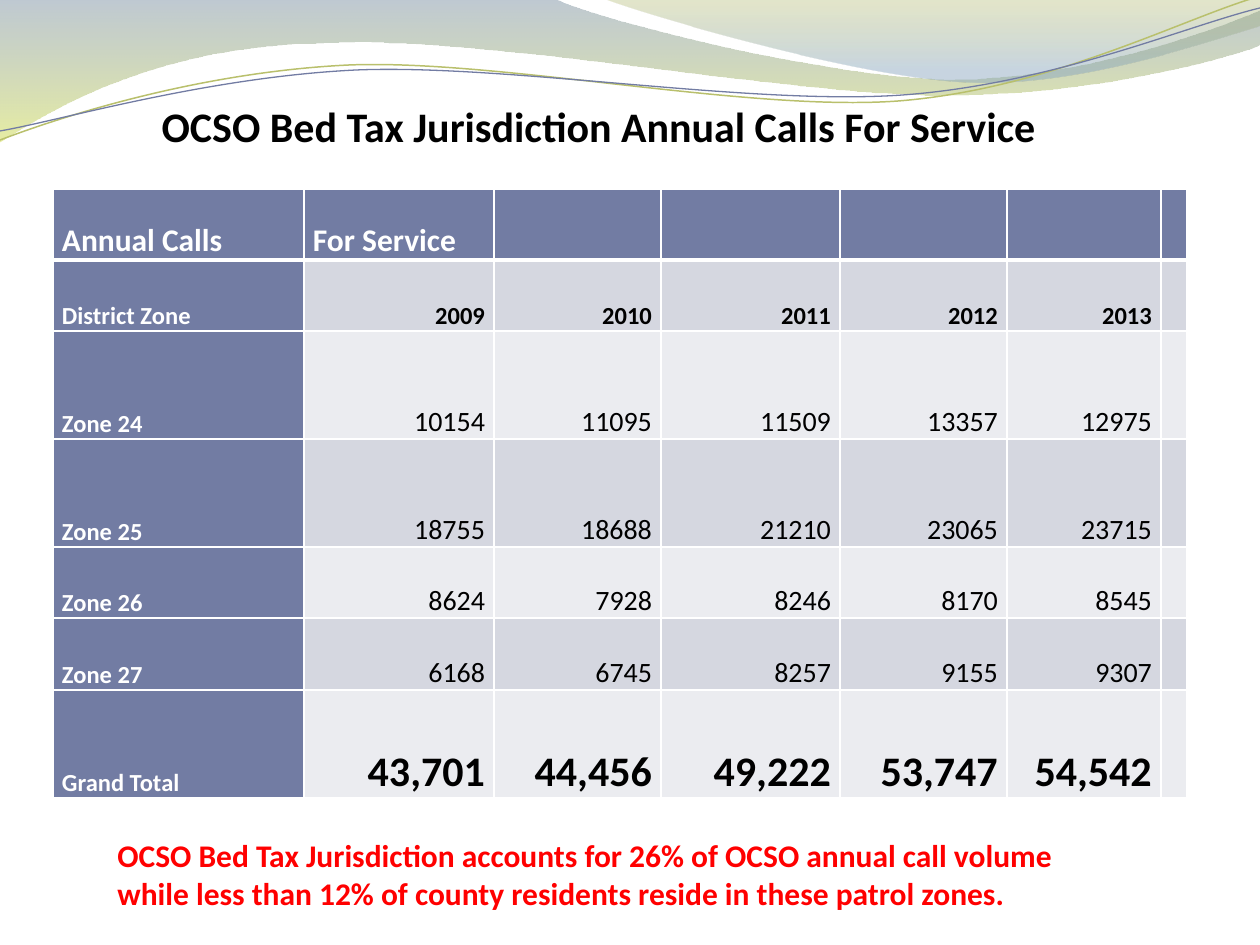
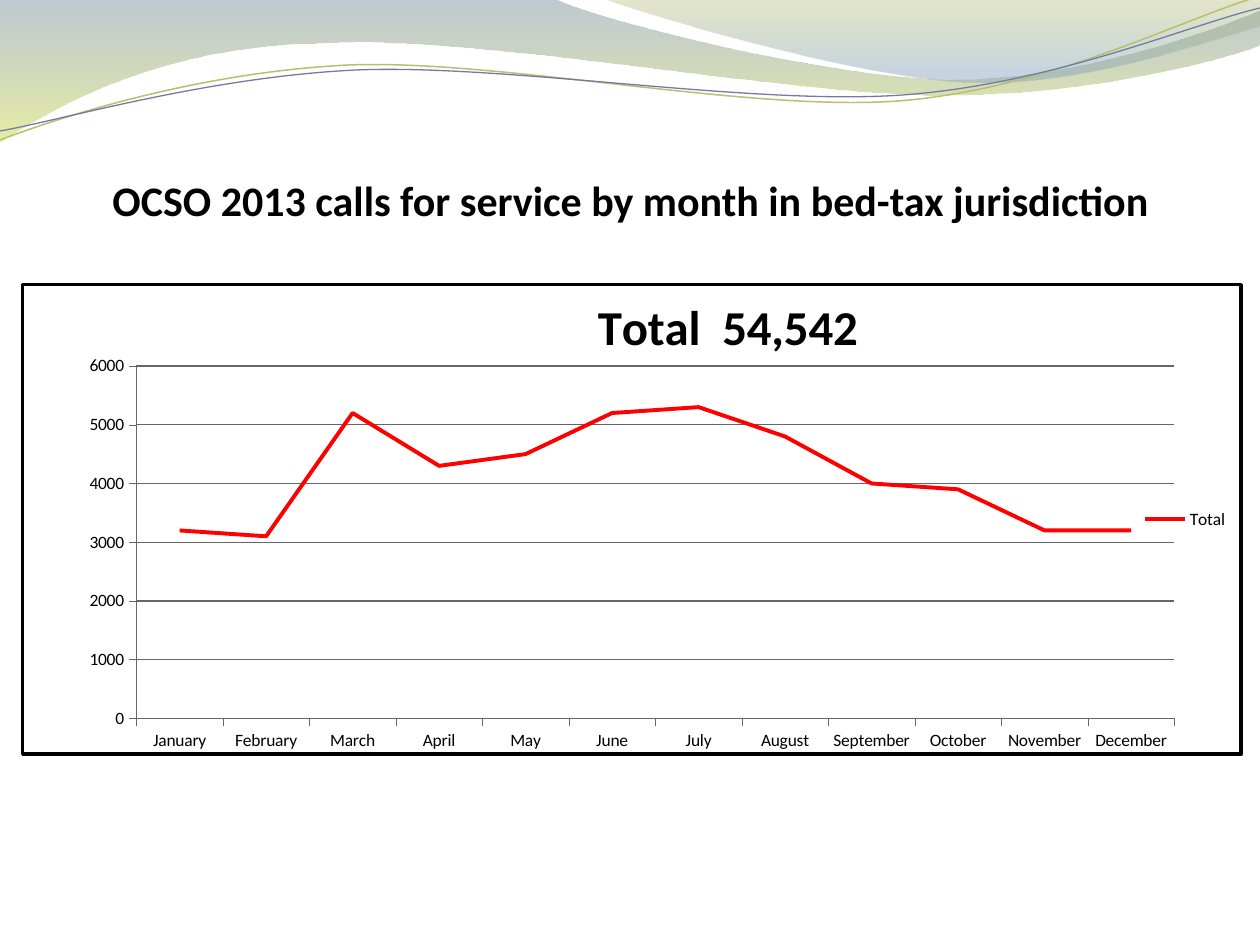
"""Build two slides on annual and monthly calls for service in the bed tax jurisdiction."""
from lxml import etree
from pptx import Presentation
from pptx import util as u
from pptx.chart.data import CategoryChartData
from pptx.dml.color import RGBColor
from pptx.enum import chart as ch, text as tx
from pptx.oxml import ns

FONT = "Calibri"
BLACK = RGBColor(0x00, 0x00, 0x00)
WHITE = RGBColor(0xFF, 0xFF, 0xFF)
RED = RGBColor(0xFF, 0x00, 0x00)
GREY = RGBColor(0x66, 0x66, 0x66)
SLATE = RGBColor(0x72, 0x7C, 0xA3)
BAND_DARK = RGBColor(0xD5, 0xD7, 0xE0)
BAND_LIGHT = RGBColor(0xEB, 0xEC, 0xF0)
STEEL = RGBColor(0x72, 0x88, 0x9B)
LIME = RGBColor(0xD3, 0xDE, 0x57)
OLIVE = RGBColor(0xA4, 0xAC, 0x50)
SKY = RGBColor(0x84, 0xA3, 0xBD)
MOSS = RGBColor(0xB9, 0xC0, 0x6C)
EMU_PER_PX = 914400 / 126

BANDS = [
    {"stops": [(0, STEEL, 45), (1, LIME, 55)], "start": (0, 0), "steps": [
        (555, -1), (600, 21, 837, 79, 955, 79), (1075, 79, 1207, 33, 1260, 11), (1261, 45),
        (1239, 55, 1096, 96, 940, 95), (784, 95, 481, 35, 324, 43), (163, 45, 58, 105, -1, 142)]},
    {"stops": [(0, OLIVE, 30), (0.8, SKY, 45)], "start": (604, -1), "steps": [
        (641, 14, 859, 78, 969, 82), (1079, 87, 1211, 40, 1260, 26), (1260, 0)]},
]
STRANDS = [
    {"color": MOSS, "weight": 0.85, "start": (0, 140), "steps": [
        (60, 117, 199, 72, 349, 65), (498, 59, 747, 112, 898, 101), (1050, 89, 1182, 19, 1257, -3)]},
    {"color": SLATE, "weight": 0.75, "start": (0, 131), "steps": [
        (59, 121, 207, 77, 357, 70), (508, 64, 752, 106, 903, 95), (1053, 84, 1186, 26, 1260, 8)]},
]

ANNUAL_TITLE = "OCSO Bed Tax Jurisdiction Annual Calls For Service "
ANNUAL_NOTE = ("OCSO Bed Tax Jurisdiction accounts for 26% of OCSO annual call volume "
               "while less than 12% of county residents reside in these patrol zones.")
ANNUAL_CALLS = [
    ["Annual Calls", "For Service", "", "", "", "", ""],
    ["District Zone", " 2009", "2010", "2011", "2012", "2013", ""],
    ["Zone 24", "10154", "11095", "11509", "13357", "12975", ""],
    ["Zone 25", "18755", "18688", "21210", "23065", "23715", ""],
    ["Zone 26", "8624", "7928", "8246", "8170", "8545", ""],
    ["Zone 27", "6168", "6745", "8257", "9155", "9307", ""],
    ["Grand Total", "43,701", "44,456", "49,222", "53,747", "54,542", ""],
]
COLUMN_WIDTHS = [251, 190, 167, 179, 167, 154, 26]
ROW_HEIGHTS = [71, 71, 108, 108, 71, 72, 108]

MONTHLY_TITLE = "OCSO 2013 calls for service by month in bed-tax jurisdiction "
MONTHLY_TOTAL = "Total  54,542"
MONTHLY_CALLS = {
    "January": 3200, "February": 3100, "March": 5200, "April": 4300,
    "May": 4500, "June": 5200, "July": 5300, "August": 4800,
    "September": 4000, "October": 3900, "November": 3200, "December": 3200,
}
CHART_BOX = (21, 283, 1222, 473)
PLOT_BOX = {"x": 114, "y": 82, "w": 1041, "h": 355}
TOTAL_CORNER = {"x": 568, "y": 0}


def px(length):
    return u.Emu(round(length * EMU_PER_PX))


def write(frame, words, size=14, color=BLACK, bold=True, align=tx.PP_ALIGN.LEFT, spacing=1.0):
    frame.word_wrap = True
    paragraph = frame.paragraphs[0]
    paragraph.alignment = align
    paragraph.line_spacing = spacing
    run = paragraph.add_run()
    run.text = words
    run.font.name = FONT
    run.font.size = u.Pt(size)
    run.font.bold = bold
    run.font.color.rgb = color


def add_curve(slide, curve, closed):
    points = [(px(x), px(y)) for step in curve["steps"] for x, y in zip(step[::2], step[1::2])]
    builder = slide.shapes.build_freeform(*map(px, curve["start"]))
    builder.add_line_segments(points, close=closed)
    outline = builder.convert_to_shape()
    outline.shadow.inherit = False
    lines = iter(list(outline.element.iter(ns.qn("a:lnTo"))))
    for step in curve["steps"]:
        segment = next(lines)
        if len(step) == 6:
            segment.addprevious(bend := etree.Element(ns.qn("a:cubicBezTo")))
            for line in (segment, next(lines), next(lines)):
                bend.append(line[0])
                line.getparent().remove(line)
    return outline


def add_waves(slide, layout):
    waves = []
    for band in BANDS:
        wave = add_curve(slide, band, True)
        wave.line.fill.background()
        wave.fill.gradient()
        wave.fill.gradient_angle = 270
        for stop, (position, color, _) in zip(wave.fill.gradient_stops, band["stops"]):
            stop.position = position
            stop.color.rgb = color
        for tint, (_, _, opacity) in zip(wave.element.iter(ns.qn("a:srgbClr")), band["stops"]):
            etree.SubElement(tint, ns.qn("a:alpha")).set("val", str(opacity * 1000))
        waves.append(wave)
    for strand in STRANDS:
        wave = add_curve(slide, strand, False)
        wave.fill.background()
        wave.line.color.rgb = strand["color"]
        wave.line.width = u.Pt(strand["weight"])
        waves.append(wave)
    for number, wave in enumerate(waves, 101):
        wave.element.nvSpPr.cNvPr.set("id", str(number))
        layout.shapes.element.append(wave.element)


def place_title(slide, words, left, top, width, height=63):
    title = slide.shapes.title
    title.left, title.top, title.width, title.height = map(px, (left, top, width, height))
    title.text_frame.auto_size = tx.MSO_AUTO_SIZE.NONE
    title.text_frame.vertical_anchor = tx.MSO_ANCHOR.TOP
    write(title.text_frame, words, size=24, align=tx.PP_ALIGN.CENTER)


def set_borders(cell, top=1, bottom=1):
    properties = cell._tc.get_or_add_tcPr()
    for i, (side, weight) in enumerate([("L", 1), ("R", 1), ("T", top), ("B", bottom)]):
        edge = etree.Element(ns.qn(f"a:ln{side}"), w=str(u.Pt(weight)))
        paint = etree.SubElement(edge, ns.qn("a:solidFill"))
        etree.SubElement(paint, ns.qn("a:srgbClr")).set("val", str(WHITE))
        properties.insert(i, edge)


def cell_format(row, column):
    if row == 0:
        return {"size": 18, "color": WHITE}
    if column == 0:
        return {"color": WHITE}
    size = {1: 14, len(ANNUAL_CALLS) - 1: 24}.get(row, 16)
    return {"size": size, "bold": size != 16, "align": tx.PP_ALIGN.RIGHT}


def add_calls_table(slide, left, top):
    calls = slide.shapes.add_table(
        len(ROW_HEIGHTS), len(COLUMN_WIDTHS), px(left), px(top),
        px(sum(COLUMN_WIDTHS)), px(sum(ROW_HEIGHTS))).table
    calls.horz_banding = False
    for column, width in zip(calls.columns, COLUMN_WIDTHS):
        column.width = px(width)
    for r, entries in enumerate(ANNUAL_CALLS):
        calls.rows[r].height = px(ROW_HEIGHTS[r])
        for c, entry in enumerate(entries):
            cell = calls.cell(r, c)
            cell.fill.solid()
            cell.fill.fore_color.rgb = SLATE if r == 0 or c == 0 else (BAND_LIGHT, BAND_DARK)[r % 2]
            cell.vertical_anchor = tx.MSO_ANCHOR.BOTTOM
            cell.margin_left = cell.margin_right = px(9)
            cell.margin_top = cell.margin_bottom = 0
            set_borders(cell, top=3 if r == 1 else 1, bottom=3 if r == 0 else 1)
            if entry:
                write(cell.text_frame, entry, spacing=1.15, **cell_format(r, c))


def set_layout(part, index, box, **modes):
    old = part.find(ns.qn("c:layout"))
    if old is not None:
        part.remove(old)
    layout = etree.Element(ns.qn("c:layout"))
    manual = etree.SubElement(layout, ns.qn("c:manualLayout"))
    *_, width, height = CHART_BOX
    shares = {key: length / (width if key in "xw" else height) for key, length in box.items()}
    for key, value in {**modes, "xMode": "edge", "yMode": "edge", **shares}.items():
        etree.SubElement(manual, ns.qn(f"c:{key}")).set("val", str(value))
    part.insert(index, layout)


def frame_chart(chart, weight):
    area = etree.Element(ns.qn("c:spPr"))
    edge = etree.Element(ns.qn("a:ln"), w=str(u.Pt(weight)))
    for parent, color in ((area, WHITE), (edge, BLACK)):
        paint = etree.SubElement(parent, ns.qn("a:solidFill"))
        etree.SubElement(paint, ns.qn("a:srgbClr")).set("val", str(color))
    area.append(edge)
    chart.element.find(ns.qn("c:chart")).addnext(area)


def add_monthly_chart(slide):
    data = CategoryChartData()
    data.categories = list(MONTHLY_CALLS)
    data.add_series("Total", list(MONTHLY_CALLS.values()))
    chart = slide.shapes.add_chart(
        ch.XL_CHART_TYPE.LINE_STACKED, *map(px, CHART_BOX), data).chart
    chart.font.name = FONT
    chart.font.size = u.Pt(10)
    chart.font.color.rgb = BLACK
    frame_chart(chart, 2)

    chart.has_title = True
    write(chart.chart_title.text_frame, MONTHLY_TOTAL, size=28)
    set_layout(chart.chart_title.element, 1, TOTAL_CORNER)
    set_layout(chart.element.find(".//" + ns.qn("c:plotArea")), 0, PLOT_BOX, layoutTarget="inner")
    chart.has_legend = True
    chart.legend.position = ch.XL_LEGEND_POSITION.RIGHT
    chart.legend.include_in_layout = False

    calls_axis, month_axis = chart.value_axis, chart.category_axis
    calls_axis.minimum_scale, calls_axis.maximum_scale, calls_axis.major_unit = 0, 6000, 1000
    calls_axis.has_major_gridlines = True
    for part, weight in ((calls_axis, 0.25), (month_axis, 0.25), (calls_axis.major_gridlines, 0.75)):
        part.format.line.color.rgb = GREY
        part.format.line.width = u.Pt(weight)
    for axis in (calls_axis, month_axis):
        axis.major_tick_mark = ch.XL_TICK_MARK.OUTSIDE

    chart.plots[0].vary_by_categories = False
    total = chart.plots[0].series[0]
    total.smooth = False
    total.marker.style = ch.XL_MARKER_STYLE.NONE
    total.format.line.color.rgb = RED
    total.format.line.width = u.Pt(2.25)


def main():
    deck = Presentation()
    deck.slide_width, deck.slide_height = px(1260), px(945)
    title_only = deck.slide_layouts[5]

    annual = deck.slides.add_slide(title_only)
    add_waves(annual, title_only)
    add_calls_table(annual, 53, 189)
    place_title(annual, ANNUAL_TITLE, 136, 94, 935)
    note = annual.shapes.add_textbox(*map(px, (105, 830, 1008, 89)))
    write(note.text_frame, ANNUAL_NOTE, size=18, color=RED)

    monthly = deck.slides.add_slide(title_only)
    add_monthly_chart(monthly)
    place_title(monthly, MONTHLY_TITLE, 21, 168, 1229)

    deck.save("out.pptx")


if __name__ == "__main__":
    main()
